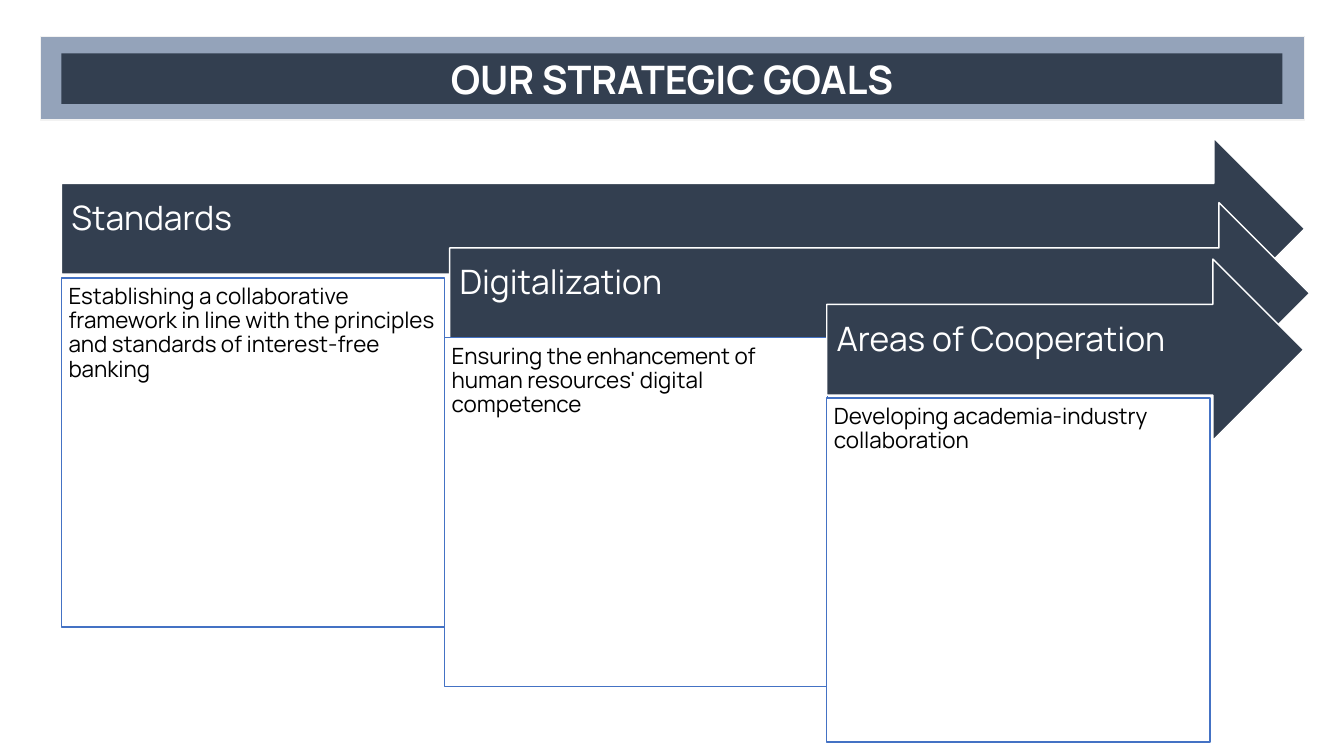
from dataclasses import dataclass

from pptx import Presentation
from pptx.dml.color import RGBColor
from pptx.enum.shapes import MSO_SHAPE
from pptx.enum.text import MSO_ANCHOR as Anchor, MSO_AUTO_SIZE, PP_ALIGN as Align
from pptx.util import Inches, Pt


@dataclass(frozen=True)
class Theme:
    font: str = "Manrope"
    navy: RGBColor = RGBColor(0x33, 0x3F, 0x50)
    slate: RGBColor = RGBColor(0x94, 0xA3, 0xBA)
    pale: RGBColor = RGBColor(0xF2, 0xF2, 0xF2)
    blue: RGBColor = RGBColor(0x44, 0x72, 0xC4)
    white: RGBColor = RGBColor(0xFF, 0xFF, 0xFF)
    black: RGBColor = RGBColor(0, 0, 0)
    title_size: Pt = Pt(28)
    goal_size: Pt = Pt(24)
    body_size: Pt = Pt(16)


THEME = Theme()
CARD_WIDTH = 3.8
ARROW_HEIGHT = 1.8

# Goal, description, arrow (left, top, width), card (left, top, height)
GOALS = [
    ("Standards",
     "Establishing a collaborative framework in line with the principles "
     "and standards of interest-free banking",
     (0.61, 1.37, 12.33), (0.61, 2.76, 3.46)),
    ("Digitalization",
     "Ensuring the enhancement of human resources' digital competence",
     (4.46, 2.01, 8.53), (4.41, 3.35, 3.46)),
    ("Areas of Cooperation",
     "Developing academia-industry collaboration",
     (8.2, 2.57, 4.73), (8.2, 3.95, 3.41)),
]


def add_block(slide, kind, left, top, width, height, fill, line):
    shape = slide.shapes.add_shape(
        kind, Inches(left), Inches(top), Inches(width), Inches(height))
    shape.shadow.inherit = False
    shape.fill.solid()
    shape.fill.fore_color.rgb = fill
    shape.line.color.rgb = line
    shape.line.width = Pt(1)
    return shape


def write(shape, text, size, color, insets, anchor, align=Align.LEFT,
          bold=False, line_spacing=0.9):
    frame = shape.text_frame
    frame.text = text
    frame.word_wrap = True
    frame.auto_size = MSO_AUTO_SIZE.NONE
    frame.vertical_anchor = anchor
    (frame.margin_left, frame.margin_top,
     frame.margin_right, frame.margin_bottom) = map(Inches, insets)
    paragraph = frame.paragraphs[0]
    paragraph.alignment = align
    paragraph.line_spacing = line_spacing
    font = paragraph.runs[0].font
    font.name, font.size, font.bold = THEME.font, size, bold
    font.color.rgb = color


def add_title(slide, text):
    title = slide.shapes.title
    title.left, title.top = Inches(0.61), Inches(0.53)
    title.width, title.height = Inches(12.11), Inches(0.5)
    title.fill.solid()
    title.fill.fore_color.rgb = THEME.navy
    write(title, text, THEME.title_size, THEME.white, (0.1, 0.05, 0.1, 0.05),
          Anchor.MIDDLE, Align.CENTER, bold=True, line_spacing=1.0)
    # The banner frame sits behind the title
    banner = add_block(slide, MSO_SHAPE.RECTANGLE, 0.4, 0.36, 12.54, 0.83,
                       THEME.slate, THEME.pale)
    title.element.addprevious(banner.element)


def add_goal(slide, name, description, arrow_box, card_box):
    left, top, width = arrow_box
    arrow = add_block(slide, MSO_SHAPE.RIGHT_ARROW, left, top, width,
                      ARROW_HEIGHT, THEME.navy, THEME.white)
    write(arrow, name, THEME.goal_size, THEME.white,
          (0.1, 0.1, 0.28, 0.29), Anchor.MIDDLE)

    left, top, height = card_box
    card = add_block(slide, MSO_SHAPE.RECTANGLE, left, top, CARD_WIDTH,
                     height, THEME.white, THEME.blue)
    write(card, description, THEME.body_size, THEME.black,
          (0.07, 0.07, 0.07, 0.07), Anchor.TOP)


def main():
    presentation = Presentation()
    presentation.slide_width = Inches(13.33)
    presentation.slide_height = Inches(7.5)
    slide = presentation.slides.add_slide(presentation.slide_layouts[5])

    add_title(slide, "OUR STRATEGIC GOALS")
    for goal in GOALS:
        add_goal(slide, *goal)

    presentation.save("out.pptx")


if __name__ == "__main__":
    main()
